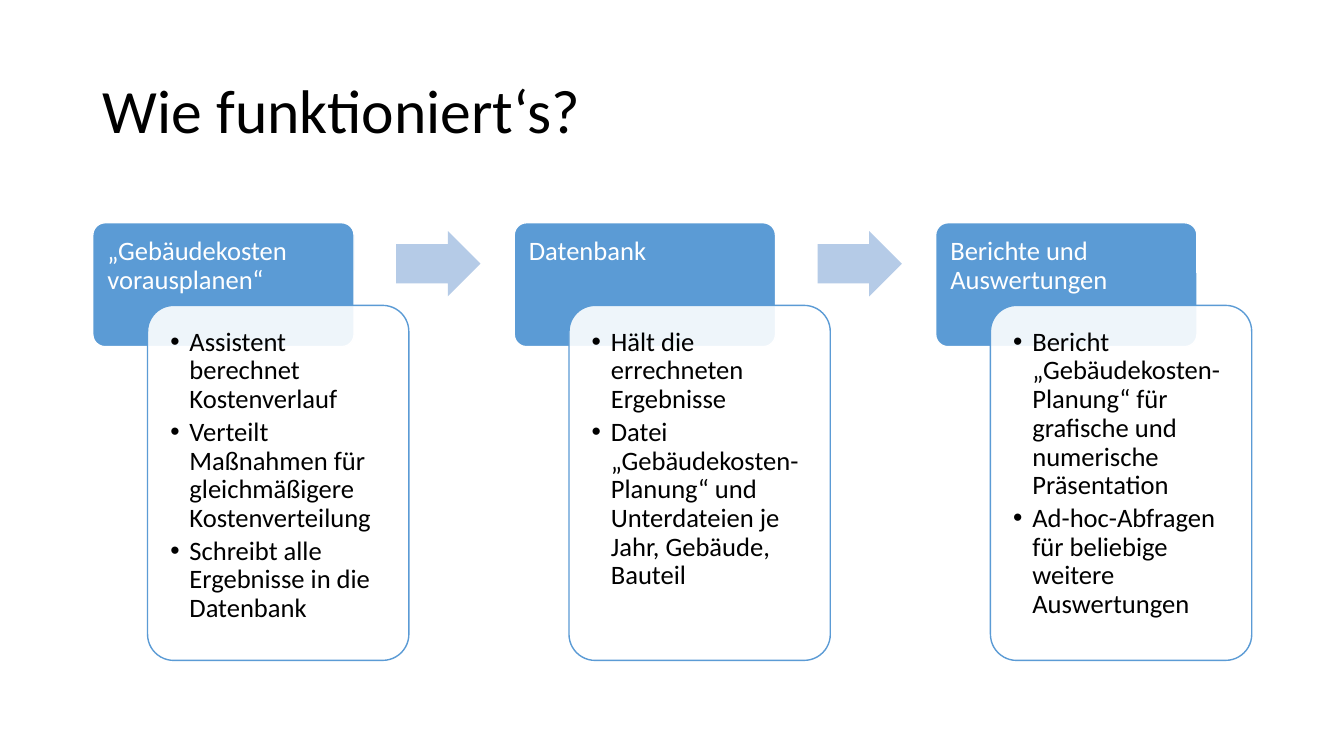
from lxml import etree
from pptx import Presentation
from pptx import util as u
from pptx.dml.color import RGBColor
from pptx.enum import shapes, text
from pptx.oxml.ns import qn

BLUE = RGBColor(0x5B, 0x9B, 0xD5)
PALE = RGBColor(0xB5, 0xCB, 0xE7)
WHITE = RGBColor(0xFF, 0xFF, 0xFF)
BLACK = RGBColor(0, 0, 0)

STEPS = [
    ("„Gebäudekosten vorausplanen“",
     ["Assistent berechnet Kostenverlauf",
      "Verteilt Maßnahmen für gleichmäßigere Kostenverteilung",
      "Schreibt alle Ergebnisse in die Datenbank"]),
    ("Datenbank",
     ["Hält die errechneten Ergebnisse",
      "Datei „Gebäudekosten-Planung“ und Unterdateien je Jahr, Gebäude, Bauteil"]),
    ("Berichte und Auswertungen",
     ["Bericht „Gebäudekosten-Planung“ für grafische und numerische Präsentation",
      "Ad-hoc-Abfragen für beliebige weitere Auswertungen"]),
]


class Flow:
    """Draws on a grid of step columns and short rows below the title."""
    left, top = 0.92, 2.21
    col, row = 4.18, 0.41
    font, size = "Calibri", 19

    def __init__(self, deck):
        self.slide = deck.slides.add_slide(deck.slide_layouts[5])

    def add_text(self, para, words, size, color):
        para.alignment = text.PP_ALIGN.LEFT
        para.line_spacing = 0.9
        run = para.add_run()
        run.text = words
        run.font.name = self.font
        run.font.size = u.Pt(size)
        run.font.color.rgb = color

    def title(self, words):
        box = self.slide.shapes.title
        box.left, box.top = u.Inches(self.left), u.Inches(0.4)
        box.width, box.height = u.Inches(11.5), u.Inches(1.45)
        box.text_frame.vertical_anchor = text.MSO_ANCHOR.MIDDLE
        self.add_text(box.text_frame.paragraphs[0], words, 44, BLACK)

    def shape(self, kind, x, y, w, h, fill, line=None):
        """Add a preset shape; x and w in columns, y and h in rows."""
        item = self.slide.shapes.add_shape(
            kind, u.Inches(self.left + x * self.col), u.Inches(self.top + y * self.row),
            u.Inches(w * self.col), u.Inches(h * self.row))
        item.shadow.inherit = False
        item.fill.solid()
        item.fill.fore_color.rgb = fill
        if line is None:
            item.line.fill.background()
        else:
            item.line.color.rgb = line
            item.line.width = u.Pt(1)
        return item

    def panel(self, x, y, h, fill, line, inset):
        item = self.shape(shapes.MSO_SHAPE.ROUNDED_RECTANGLE, x, y, 0.62, h, fill, line)
        item.adjustments[0] = 0.1
        frame = item.text_frame
        frame.word_wrap = True
        frame.vertical_anchor = text.MSO_ANCHOR.TOP
        frame.margin_left = frame.margin_right = u.Inches(inset)
        frame.margin_top = frame.margin_bottom = u.Inches(inset)
        return item

    def head(self, step, words):
        item = self.panel(step, 0, 3, BLUE, WHITE, 0.11)
        self.add_text(item.text_frame.paragraphs[0], words, self.size, WHITE)

    def card(self, step, points):
        item = self.panel(step + 0.13, 2, 8.59, WHITE, BLUE, 0.15)
        tint = item._element.spPr.find(qn("a:solidFill"))[0]
        etree.SubElement(tint, qn("a:alpha"), val="90000")
        frame = item.text_frame
        for n, point in enumerate(points):
            para = frame.add_paragraph() if n else frame.paragraphs[0]
            self.bullet(para)
            self.add_text(para, point, self.size, BLACK)
            para.space_after = u.Pt(2.85)

    def bullet(self, para):
        props = para._p.get_or_add_pPr()
        props.set("marL", str(u.Inches(0.19)))
        props.set("indent", str(u.Inches(-0.19)))
        etree.SubElement(props, qn("a:buFont"), typeface="Arial")
        etree.SubElement(props, qn("a:buChar"), char="•")

    def arrow(self, step):
        item = self.shape(shapes.MSO_SHAPE.RIGHT_ARROW, step + 0.72, 0.2, 0.2, 1.58, PALE)
        item.adjustments[0], item.adjustments[1] = 0.6, 0.5


def main():
    deck = Presentation()
    deck.slide_width, deck.slide_height = u.Inches(13.33), u.Inches(7.5)
    flow = Flow(deck)
    flow.title("Wie funktioniert‘s?")
    for step, (name, points) in enumerate(STEPS):
        flow.head(step, name)
        flow.card(step, points)
        if step < len(STEPS) - 1:
            flow.arrow(step)
    deck.save("out.pptx")


if __name__ == "__main__":
    main()
